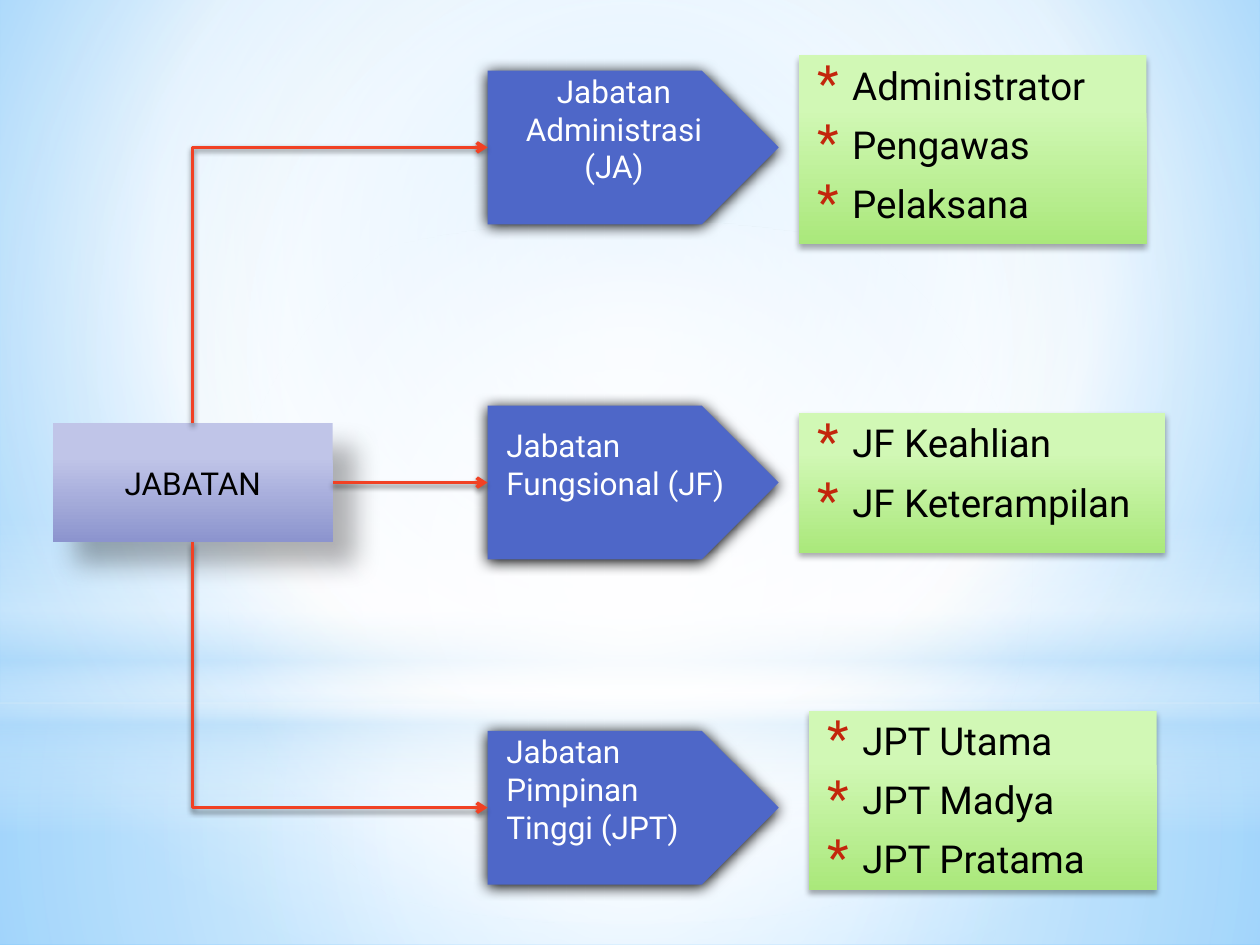
from lxml.etree import SubElement
from pptx import Presentation
from pptx.dml.color import RGBColor
from pptx.enum.shapes import MSO_CONNECTOR, MSO_SHAPE
from pptx.enum.text import MSO_ANCHOR, PP_ALIGN
from pptx.oxml.ns import qn
from pptx.util import Inches, Pt

COLORS = {
    "white": "FFFFFF", "black": "000000", "sky": "9ED5FF", "azure": "5BB9FF",
    "mist": "B4DCFA", "lime": "D1F8B5", "green": "AAE87B", "lilac": "C0C5E8",
    "violet": "8C94CE", "indigo": "4E67C8", "red": "F14124", "bullet": "C3260C",
}
FONT = "Roboto"
CENTER = (50, 50, 50, 50)
BACKDROP = [(0, "sky", 100), (60, "white", 100), (100, "azure", 100)]
LAYERS = [
    (MSO_SHAPE.RECTANGLE, (0, 5.58, 10, 1.92),
     [(0, "white", 91), (37, "white", 76), (100, "mist", 79)], CENTER),
    (MSO_SHAPE.RECTANGLE, (0, 0, 10, 5.58),
     [(0, "white", 89), (48, "white", 62), (100, "mist", 79)], CENTER),
    (MSO_SHAPE.RECTANGLE, (0, 4.12, 10, 2.5),
     [(0, "white", 0), (29, "white", 30), (45, "mist", 40), (55, "white", 26),
      (65, "mist", 60), (100, "white", 0)], None),
    (MSO_SHAPE.OVAL, (0, 1.75, 10, 5.58),
     [(0, "white", 100), (56, "white", 0)], CENTER),
]
ROOT = ("JABATAN", (0.42, 3.36, 2.22, 0.94))
BRANCHES = [
    {"title": "Jabatan Administrasi (JA)", "top": 0.56, "align": PP_ALIGN.CENTER,
     "items": ["Administrator", "Pengawas", "Pelaksana"],
     "list_at": (6.34, 0.44, 2.76, 1.5)},
    {"title": "Jabatan Fungsional (JF)", "top": 3.22, "align": PP_ALIGN.LEFT,
     "items": ["JF Keahlian", "JF Keterampilan"],
     "list_at": (6.34, 3.28, 2.91, 1.11)},
    {"title": "Jabatan Pimpinan Tinggi (JPT)", "top": 5.8, "align": PP_ALIGN.LEFT,
     "items": ["JPT Utama", "JPT Madya", "JPT Pratama"],
     "list_at": (6.42, 5.64, 2.76, 1.42)},
]
ARROW_LEFT, ARROW_WIDTH, ARROW_HEIGHT = 3.87, 2.31, 1.22
LIST_SHADOW = (32, 3.5, 2.2, 90)
ROOT_SHADOW = (30, 15, 18, 45)
ARROW_SHADOW = (100, 8.5, 1, 90)
LINE_SHADOW = (45, 3.1, 1.8, 90)


def rgb(name):
    return RGBColor.from_string(COLORS[name])


def add(parent, tag, **attributes):
    return SubElement(parent, qn("a:" + tag),
                      {key: str(value) for key, value in attributes.items()})


def add_color(parent, name, alpha=100):
    color = add(parent, "srgbClr", val=COLORS[name])
    if alpha < 100:
        add(color, "alpha", val=alpha * 1000)


def set_gradient(fill, parent, stops, focus=None):
    fill.solid()
    solid = parent.find(qn("a:solidFill"))
    gradient = add(parent, "gradFill", rotWithShape=1)
    parent.replace(solid, gradient)
    stop_list = add(gradient, "gsLst")
    for position, name, alpha in stops:
        add_color(add(stop_list, "gs", pos=position * 1000), name, alpha)
    if focus:
        circle = add(gradient, "path", path="circle")
        add(circle, "fillToRect", **{side: share * 1000 for side, share in zip("ltrb", focus)})
    else:
        add(gradient, "lin", ang=90 * 60000, scaled=0)


def add_shadow(effects, alpha, blur, distance, angle):
    shadow = add(effects, "outerShdw", blurRad=Pt(blur), dist=Pt(distance),
                 dir=angle * 60000, algn="ctr", rotWithShape=0)
    add_color(shadow, "black", alpha)


def add_box(page, kind, at, stops=None, focus=None, color=None, shadow=None):
    box = page.shapes.add_shape(kind, *map(Inches, at))
    box.shadow.inherit = False
    box.line.fill.background()
    properties = box._element.spPr
    if stops:
        set_gradient(box.fill, properties, stops, focus)
    else:
        box.fill.solid()
        box.fill.fore_color.rgb = rgb(color)
    if shadow:
        add_shadow(properties.find(qn("a:effectLst")), *shadow)
    return box


def write(box, lines, size=18, color="black", align=PP_ALIGN.CENTER,
          anchor=MSO_ANCHOR.MIDDLE, margin=0, bottom=0.05, bullets=False):
    frame = box.text_frame
    frame.word_wrap = True
    frame.vertical_anchor = anchor
    frame.margin_bottom = Inches(bottom)
    for index, line in enumerate(lines):
        para = frame.add_paragraph() if index else frame.paragraphs[0]
        para.alignment = align
        span = para.add_run()
        span.text = " " + line if bullets else line
        span.font.name, span.font.size = FONT, Pt(size)
        span.font.color.rgb = rgb(color)
        layout = para._p.get_or_add_pPr()
        layout.set("marL", str(Inches(margin)))
        if bullets:
            para.space_before, para.space_after = Pt(size * 0.2), Pt(3)
            layout.set("indent", str(Inches(-0.2)))
            add_color(add(layout, "buClr"), "bullet")
            add(layout, "buSzPct", val=130000)
            add(layout, "buFont", typeface=FONT)
            add(layout, "buChar", char="*")


def join(page, root, arrow):
    target = arrow.top + arrow.height // 2
    middle = root.top + root.height // 2
    straight = abs(target - middle) < Inches(0.05)
    down = target > middle
    kind = MSO_CONNECTOR.STRAIGHT if straight else MSO_CONNECTOR.ELBOW
    line = page.shapes.add_connector(kind, 0, 0, 0, 0)
    line.begin_connect(root, 3 if straight else 2 if down else 0)
    line.end_connect(arrow, 1)
    properties = line._element.spPr
    if not straight:
        start_x = root.left + root.width // 2
        start_y = root.top + root.height if down else root.top
        run, rise = arrow.left - start_x, abs(target - start_y)
        line.left = start_x + (run - rise) // 2
        line.top = (start_y + target - run) // 2
        line.width, line.height = rise, run
        frame = properties.find(qn("a:xfrm"))
        frame.set("rot", str((270 if down else 90) * 60000))
        frame.set("flipH", "1")
        frame.set("flipV", "0" if down else "1")
        properties.find(qn("a:prstGeom")).set("prst", "bentConnector2")
    line.line.color.rgb = rgb("red")
    line.line.width = Pt(2)
    add(properties.find(qn("a:ln")), "tailEnd", type="arrow")
    add_shadow(add(properties, "effectLst"), *LINE_SHADOW)


def main():
    deck = Presentation()
    deck.slide_width, deck.slide_height = Inches(10), Inches(7.5)
    page = deck.slides.add_slide(deck.slide_layouts[6])
    fill = page.background.fill
    fill.solid()
    set_gradient(fill, page._element.cSld.bg.bgPr, BACKDROP, (20, 10, 20, 60))
    for kind, at, stops, focus in LAYERS:
        add_box(page, kind, at, stops, focus)

    title, at = ROOT
    root = add_box(page, MSO_SHAPE.RECTANGLE, at,
                   [(28, "lilac", 100), (100, "violet", 100)], shadow=ROOT_SHADOW)
    write(root, [title])
    for branch in BRANCHES:
        box = add_box(page, MSO_SHAPE.RECTANGLE, branch["list_at"],
                      [(28, "lime", 100), (100, "green", 100)], shadow=LIST_SHADOW)
        write(box, branch["items"], size=22, align=PP_ALIGN.LEFT,
              anchor=MSO_ANCHOR.TOP, margin=0.25, bullets=True)
        arrow = add_box(page, MSO_SHAPE.PENTAGON,
                        (ARROW_LEFT, branch["top"], ARROW_WIDTH, ARROW_HEIGHT),
                        color="indigo", shadow=ARROW_SHADOW)
        centered = branch["align"] == PP_ALIGN.CENTER
        write(arrow, [branch["title"]], color="white", align=branch["align"],
              margin=0 if centered else 0.05, bottom=0.35)
        join(page, root, arrow)
    deck.save("out.pptx")


if __name__ == "__main__":
    main()
